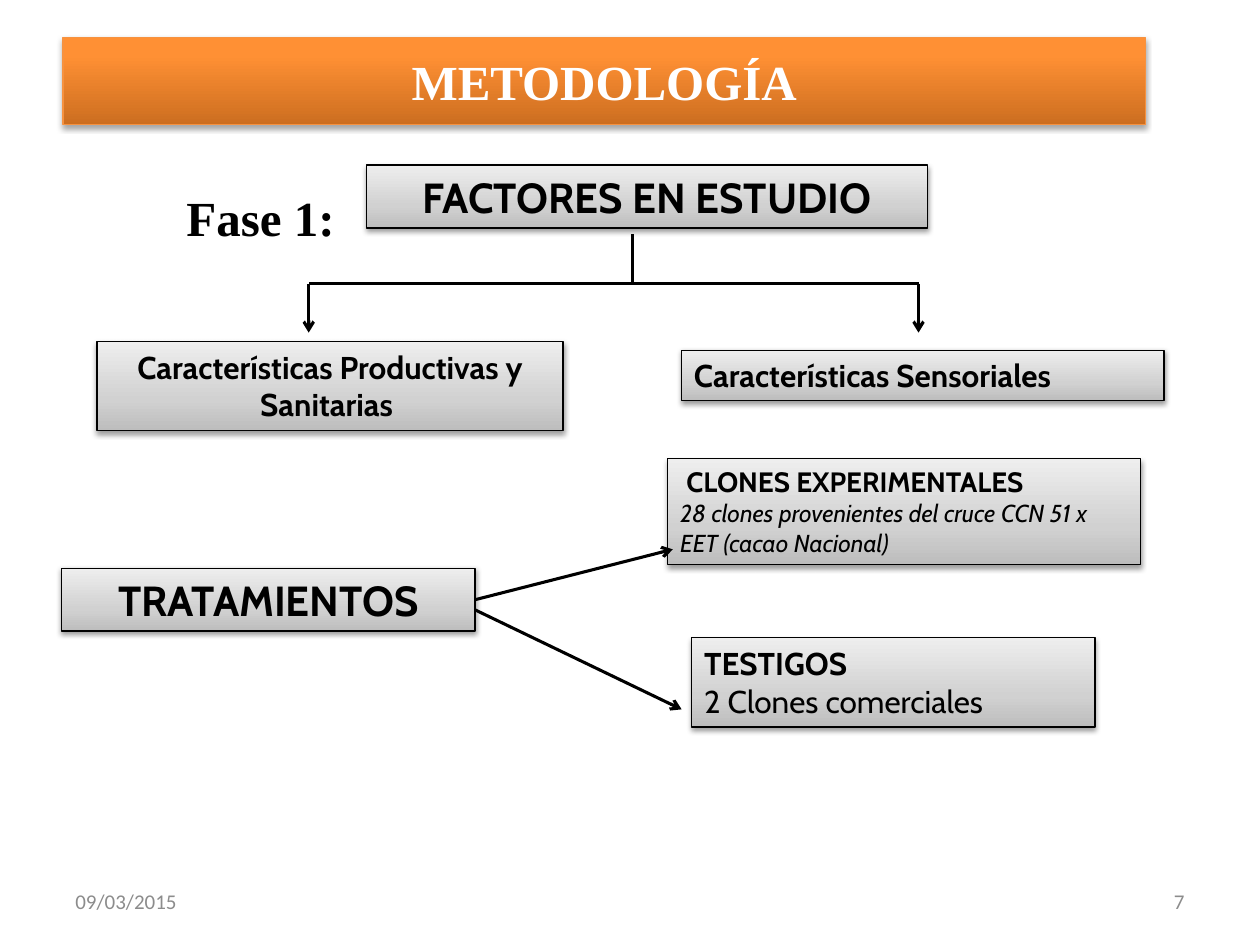
from dataclasses import dataclass

import lxml.etree
import pptx
import pptx.dml.color
import pptx.enum.shapes
import pptx.enum.text
import pptx.oxml.ns
import pptx.util

Inches = pptx.util.Inches
Pt = pptx.util.Pt
ALIGN = pptx.enum.text.PP_ALIGN
ANCHOR = pptx.enum.text.MSO_ANCHOR
qn = pptx.oxml.ns.qn


@dataclass(frozen=True)
class Theme:
    ink: str = "000000"
    white: str = "FFFFFF"
    muted: str = "8C8C8C"
    orange: str = "F69240"
    orange_stops: tuple = ((0, "CC6E20"), (80, "FF9034"), (100, "FF9136"))
    grey_stops: tuple = ((0, "BDBDBD"), (35, "D1D1D1"), (100, "EEEEEE"))
    serif: str = "Times New Roman"
    label: str = "Cabin"
    footer: str = "Calibri"
    title_size: float = 28
    heading_size: float = 24
    body_size: float = 18
    clone_size: float = 16
    detail_size: float = 14
    footer_size: float = 12
    outline: float = 0.75
    branch: float = 2
    arrow: float = 1.75


THEME = Theme()


@dataclass(frozen=True)
class Line:
    text: str
    size: float = THEME.body_size
    bold: bool = True
    italic: bool = False


@dataclass(frozen=True)
class Panel:
    frame: tuple
    lines: tuple
    align: ALIGN = ALIGN.LEFT


@dataclass(frozen=True)
class Link:
    start: tuple
    end: tuple
    arrow: bool = False


def rgb(value: str) -> pptx.dml.color.RGBColor:
    return pptx.dml.color.RGBColor.from_string(value)


def write(para, text: str, *, font: str, size: float, color: str = THEME.ink,
          bold: bool = False, italic: bool = False, align: ALIGN = ALIGN.LEFT) -> None:
    para.alignment = align
    span = para.add_run()
    span.text = text
    span.font.name = font
    span.font.size = Pt(size)
    span.font.bold = bold
    span.font.italic = italic
    span.font.color.rgb = rgb(color)


def style_box(box, stops: tuple, line: str, opacity: int, distance: float) -> None:
    """Give a box an upward gradient, a thin outline and a soft shadow below."""
    box.fill.gradient()
    box.fill.gradient_angle = 90
    stop_list = box._element.spPr.find(qn("a:gradFill")).find(qn("a:gsLst"))
    for stop in list(stop_list):
        stop_list.remove(stop)
    for position, color in stops:
        stop = lxml.etree.SubElement(stop_list, qn("a:gs"), pos=str(position * 1000))
        lxml.etree.SubElement(stop, qn("a:srgbClr"), val=color)
    box.line.color.rgb = rgb(line)
    box.line.width = Pt(THEME.outline)
    box.shadow.inherit = False
    effects = box._element.spPr.find(qn("a:effectLst"))
    shadow = lxml.etree.SubElement(
        effects, qn("a:outerShdw"), blurRad=str(Pt(3.1)), dist=str(Pt(distance)),
        dir="5400000", rotWithShape="0")
    shade = lxml.etree.SubElement(shadow, qn("a:srgbClr"), val=THEME.ink)
    lxml.etree.SubElement(shade, qn("a:alpha"), val=str(opacity * 1000))


def add_text(page, frame: tuple, text: str, *, anchor: ANCHOR = ANCHOR.TOP, **style):
    box = page.shapes.add_textbox(*map(Inches, frame))
    box.text_frame.word_wrap = True
    box.text_frame.vertical_anchor = anchor
    write(box.text_frame.paragraphs[0], text, **style)
    return box


def add_panel(page, panel: Panel) -> None:
    box = page.shapes.add_shape(
        pptx.enum.shapes.MSO_SHAPE.RECTANGLE, *map(Inches, panel.frame))
    style_box(box, THEME.grey_stops, THEME.ink, opacity=38, distance=1.6)
    frame = box.text_frame
    frame.word_wrap = True
    frame.vertical_anchor = ANCHOR.TOP
    frame.auto_size = pptx.enum.text.MSO_AUTO_SIZE.SHAPE_TO_FIT_TEXT
    for index, line in enumerate(panel.lines):
        para = frame.add_paragraph() if index else frame.paragraphs[0]
        write(para, line.text, font=THEME.label, size=line.size, bold=line.bold,
              italic=line.italic, align=panel.align)


def add_link(page, link: Link) -> None:
    connector = page.shapes.add_connector(
        pptx.enum.shapes.MSO_CONNECTOR.STRAIGHT, *map(Inches, link.start + link.end))
    connector.line.color.rgb = rgb(THEME.ink)
    connector.line.width = Pt(THEME.arrow if link.arrow else THEME.branch)
    properties = connector._element.spPr
    if link.arrow:
        lxml.etree.SubElement(properties.find(qn("a:ln")), qn("a:tailEnd"), type="arrow")
    lxml.etree.SubElement(properties, qn("a:effectLst"))


# Diagram contents
PANELS = (
    Panel((2.91, 1.31, 4.45, 0.5),
          (Line("FACTORES EN ESTUDIO", THEME.heading_size),), ALIGN.CENTER),
    Panel((0.77, 2.71, 3.7, 0.71),
          (Line("Características Productivas y Sanitarias "),), ALIGN.CENTER),
    Panel((5.41, 2.78, 3.83, 0.4), (Line("Características Sensoriales"),)),
    Panel((0.49, 4.51, 3.28, 0.5),
          (Line("TRATAMIENTOS", THEME.heading_size),), ALIGN.CENTER),
    Panel((5.3, 3.64, 3.75, 0.84),
          (Line(" CLONES EXPERIMENTALES", THEME.clone_size),
           Line("28 clones provenientes del cruce CCN 51 x EET (cacao Nacional)",
                THEME.detail_size, bold=False, italic=True))),
    Panel((5.49, 5.06, 3.2, 0.71),
          (Line("TESTIGOS"), Line("2 Clones comerciales", bold=False))),
)

TRUNK_X, FORK_Y, BRANCH_END_Y = 5.02, 2.25, 2.64
BRANCHES = (2.45, 7.29)
LINKS = (
    Link((TRUNK_X, 1.86), (TRUNK_X, FORK_Y)),
    *(Link((TRUNK_X, FORK_Y), (x, FORK_Y)) for x in BRANCHES),
    *(Link((x, FORK_Y), (x, BRANCH_END_Y), arrow=True) for x in BRANCHES),
    Link((3.77, 4.76), (5.34, 4.36), arrow=True),
    Link((3.77, 4.84), (5.41, 5.63), arrow=True),
)


def main() -> None:
    deck = pptx.Presentation()
    deck.slide_width, deck.slide_height = Inches(10), Inches(7.5)
    page = deck.slides.add_slide(deck.slide_layouts[5])

    # Title banner
    title = page.shapes.title
    title.left, title.top, title.width, title.height = map(Inches, (0.5, 0.3, 8.59, 0.69))
    style_box(title, THEME.orange_stops, THEME.orange, opacity=35, distance=1.8)
    title.text_frame.vertical_anchor = ANCHOR.MIDDLE
    write(title.text_frame.paragraphs[0], "METODOLOGÍA", font=THEME.serif,
          size=THEME.title_size, color=THEME.white, bold=True, align=ALIGN.CENTER)

    # Phase label
    phase = add_text(page, (0.49, 1.07, 9, 5.75), "Fase 1:", font=THEME.serif,
                     size=THEME.title_size, bold=True)
    phase.text_frame.margin_left = Inches(0.99)
    phase.text_frame.margin_top = Inches(0.42)

    # Boxes and the lines between them
    for panel in PANELS:
        add_panel(page, panel)
    for link in LINKS:
        add_link(page, link)

    # Date and page number
    for left, text, align in ((0.5, "09/03/2015", ALIGN.LEFT), (7.17, "7", ALIGN.RIGHT)):
        add_text(page, (left, 6.95, 2.33, 0.4), text, anchor=ANCHOR.MIDDLE, align=align,
                 font=THEME.footer, size=THEME.footer_size, color=THEME.muted)

    deck.save("out.pptx")


if __name__ == "__main__":
    main()
